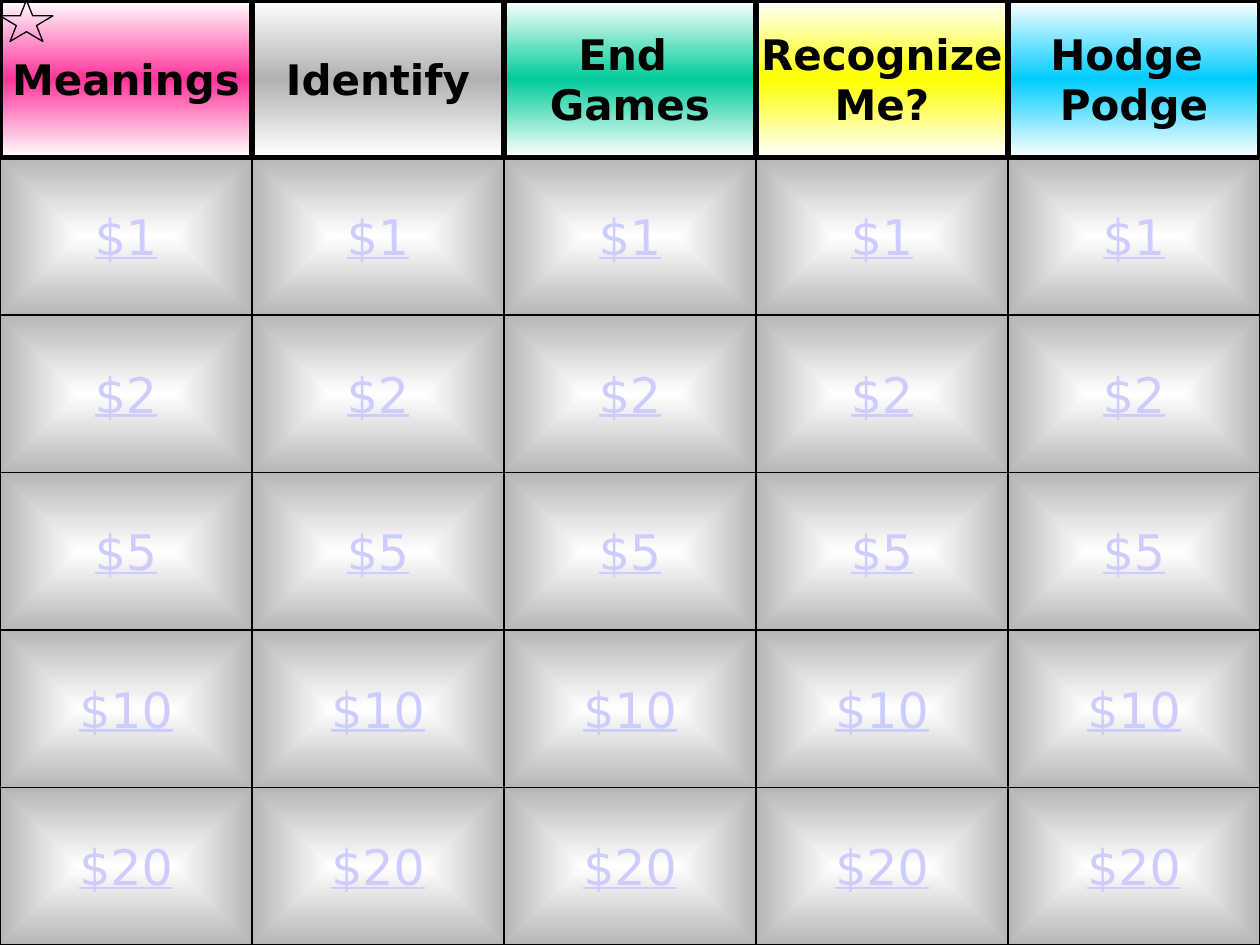
import pptx
import pptx.dml.color
import pptx.enum.shapes
import pptx.enum.text
import pptx.oxml
import pptx.oxml.ns
import pptx.util

Inches = pptx.util.Inches
Shapes = pptx.enum.shapes.MSO_SHAPE

CATEGORIES = [
    (["Meanings"], "FF3399"),
    (["Identify"], "B2B2B2"),
    (["End ", "Games"], "00CC99"),
    (["Recognize", "Me?"], "FFFF00"),
    (["Hodge ", "Podge"], "00CCFF"),
]
PRIZES = ["$1", "$2", "$5", "$10", "$20"]
FONT = "DejaVu Sans"
WIDTH, HEIGHT = 10, 7.5
CELL_WIDTH = WIDTH / len(CATEGORIES)
CELL_HEIGHT = HEIGHT / (len(PRIZES) + 1)


def color(value):
    return pptx.dml.color.RGBColor.from_string(value)


def set_gradient(fill, parent, colors, shade):
    fill.gradient()
    old = next(parent.iter(pptx.oxml.ns.qn("a:gradFill")))
    last = len(colors) - 1
    stops = "".join(
        f'<a:gs pos="{index * 100000 // last}"><a:srgbClr val="{value}"/></a:gs>'
        for index, value in enumerate(colors)
    )
    if shade == "linear":
        direction = '<a:lin ang="5400000" scaled="1"/>'
    else:
        direction = (
            f'<a:path path="{shade}">'
            '<a:fillToRect l="50000" t="50000" r="50000" b="50000"/></a:path>'
        )
    new = pptx.oxml.parse_xml(
        f'<a:gradFill {pptx.oxml.ns.nsdecls("a")} rotWithShape="1">'
        f"<a:gsLst>{stops}</a:gsLst>{direction}</a:gradFill>"
    )
    old.getparent().replace(old, new)


def add_outlined_shape(slide, kind, left, top, width, height, line_width):
    shape = slide.shapes.add_shape(
        kind, Inches(left), Inches(top), Inches(width), Inches(height)
    )
    shape.shadow.inherit = False
    shape.line.color.rgb = color("000000")
    shape.line.width = pptx.util.Pt(line_width)
    return shape


def write_text(shape, lines, size, font_color, bold=False, underline=False):
    frame = shape.text_frame
    frame.word_wrap = False
    frame.vertical_anchor = pptx.enum.text.MSO_ANCHOR.MIDDLE
    frame.text = "\n".join(lines)
    for paragraph in frame.paragraphs:
        paragraph.alignment = pptx.enum.text.PP_ALIGN.CENTER
        font = paragraph.runs[0].font
        font.name = FONT
        font.size = pptx.util.Pt(size)
        font.bold = bold
        font.underline = underline
        font.color.rgb = color(font_color)


def add_cell(slide, kind, column, row, line_width, colors, shade, lines, **text_format):
    shape = add_outlined_shape(
        slide, kind, column * CELL_WIDTH, row * CELL_HEIGHT,
        CELL_WIDTH, CELL_HEIGHT, line_width,
    )
    set_gradient(shape.fill, shape.element, colors, shade)
    write_text(shape, lines, **text_format)


def main():
    presentation = pptx.Presentation()
    presentation.slide_width = Inches(WIDTH)
    presentation.slide_height = Inches(HEIGHT)
    slide = presentation.slides.add_slide(presentation.slide_layouts[6])
    set_gradient(slide.background.fill, slide.element, ["CC00FF", "9200B6"], "shape")

    for column in range(len(CATEGORIES)):
        for row, prize in enumerate(PRIZES, start=1):
            add_cell(
                slide, Shapes.ACTION_BUTTON_CUSTOM, column, row, 0.75,
                ["FFFFFF", "B6B6B6"], "rect", [prize],
                size=28, font_color="CCCCFF", underline=True,
            )
    for column, (lines, middle) in enumerate(CATEGORIES):
        add_cell(
            slide, Shapes.RECTANGLE, column, 0, 3,
            ["FFFFFF", middle, "FFFFFF"], "linear", lines,
            size=24, font_color="000000", bold=True,
        )

    star = add_outlined_shape(slide, Shapes.STAR_5_POINT, 0, 0, 0.42, 0.33, 0.75)
    star.fill.background()
    presentation.save("out.pptx")


if __name__ == "__main__":
    main()
